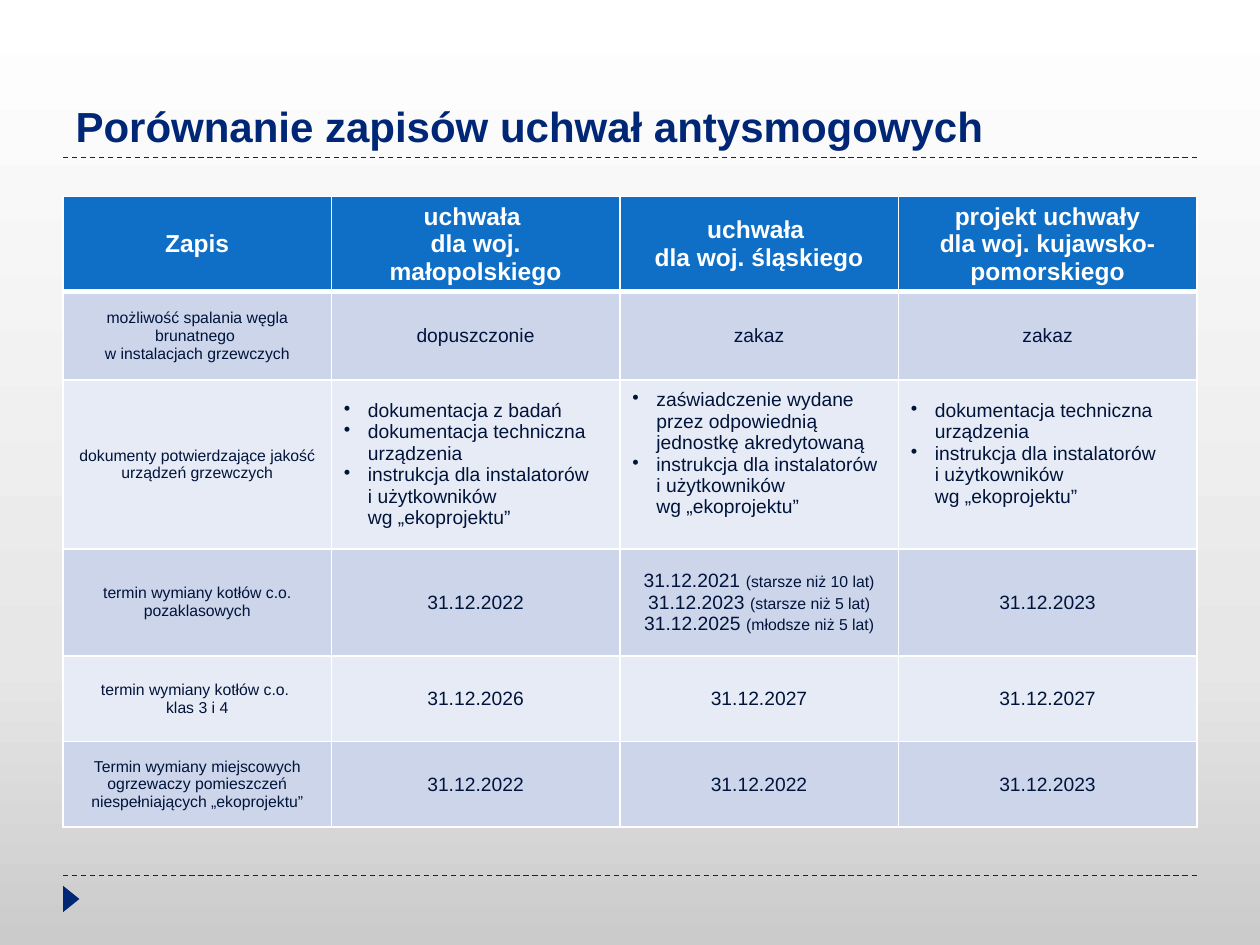
import copy
import pptx
import pptx.util
import pptx.dml.color
import pptx.enum.dml
import pptx.enum.shapes
import pptx.enum.text
import pptx.oxml
import pptx.oxml.ns

Inches, Pt = pptx.util.Inches, pptx.util.Pt
RGB = pptx.dml.color.RGBColor
Align = pptx.enum.text.PP_ALIGN
Anchor = pptx.enum.text.MSO_ANCHOR
qn = pptx.oxml.ns.qn

TITLE = "Porównanie zapisów uchwał antysmogowych"
GUIDE = "instrukcja dla instalatorów \vi użytkowników \vwg „ekoprojektu”"
TECH = "dokumentacja techniczna urządzenia"
ROWS = [
    ["Zapis", "uchwała \ndla woj. małopolskiego", "uchwała \ndla woj. śląskiego",
     "projekt uchwały\vdla woj. kujawsko-pomorskiego"],
    ["możliwość spalania węgla brunatnego \vw instalacjach grzewczych",
     "dopuszczonie", "zakaz", "zakaz"],
    ["dokumenty potwierdzające jakość urządzeń grzewczych",
     ["dokumentacja z badań", TECH, GUIDE],
     ["zaświadczenie wydane przez odpowiednią jednostkę akredytowaną", GUIDE],
     [TECH, GUIDE]],
    ["termin wymiany kotłów c.o. pozaklasowych", "31.12.2022",
     "31.12.2021 (starsze niż 10 lat)\n31.12.2023 (starsze niż 5 lat)\n"
     "31.12.2025 (młodsze niż 5 lat)", "31.12.2023"],
    ["termin wymiany kotłów c.o. \vklas 3 i 4", "31.12.2026", "31.12.2027", "31.12.2027"],
    ["Termin wymiany miejscowych ogrzewaczy pomieszczeń niespełniających „ekoprojektu”",
     "31.12.2022", "31.12.2022", "31.12.2023"],
]
WIDTHS = [2.13, 2.29, 2.21, 2.37]
HEIGHTS = [0.75, 0.7, 1.34, 0.85, 0.68, 0.68]
LEFT, WIDE = 0.5, 9
RULES = [6.95, 1.25]
HEAD, BODY, SMALL = 14, 11, 9

NAVY = RGB(0x00, 0x27, 0x76)
INK = RGB(0x00, 0x14, 0x3B)
WHITE = RGB(0xFF, 0xFF, 0xFF)
BLUE = RGB(0x0F, 0x6F, 0xC6)
BANDS = [RGB(0xE7, 0xEB, 0xF5), RGB(0xCC, 0xD5, 0xEA)]
STOPS = [(0, WHITE), (0.7, RGB(0xE7, 0xE7, 0xE7)), (1, RGB(0xCB, 0xCB, 0xCB))]


def shade(slide):
    fill = slide.background.fill
    fill.gradient()
    fill.gradient_angle = 270
    stops = slide.element.find(".//" + qn("a:gsLst"))
    stops.append(copy.deepcopy(stops[0]))
    for stop, (place, color) in zip(fill.gradient_stops, STOPS):
        stop.position = place
        stop.color.rgb = color


def rule(slide, top):
    line = slide.shapes.add_connector(
        pptx.enum.shapes.MSO_CONNECTOR.STRAIGHT,
        Inches(LEFT), Inches(top), Inches(LEFT + WIDE), Inches(top))
    line.line.color.rgb = NAVY
    line.line.width = Pt(0.75)
    line.line.dash_style = pptx.enum.dml.MSO_LINE.DASH
    props = line.element.spPr
    props.append(props.makeelement(qn("a:effectLst"), {}))


def edge(cell, row):
    props = cell._tc.get_or_add_tcPr()
    thick = {"T": 3 if row == 1 else 1, "B": 3 if row == 0 else 1}
    for side in "LRTB":
        line = pptx.oxml.parse_xml(
            f'<a:ln{side} {pptx.oxml.ns.nsdecls("a")} w="{Pt(thick.get(side, 1))}">'
            f'<a:solidFill><a:srgbClr val="{WHITE}"/></a:solidFill></a:ln{side}>')
        props.append(line)


def bullet(para):
    props = para._p.get_or_add_pPr()
    props.set("marL", str(Inches(0.19)))
    props.set("indent", str(-Inches(0.19)))
    mark = props.makeelement(qn("a:buChar"), {"char": "•"})
    props.append(mark)


def write(cell, row, col, text):
    listed = isinstance(text, list)
    frame = cell.text_frame
    frame.text = "\n".join(text) if listed else text
    cell.vertical_anchor = Anchor.MIDDLE
    if listed and col > 1:
        cell.margin_bottom = Inches(0.22)
    size = HEAD if row == 0 else SMALL if col == 0 else BODY
    for para in frame.paragraphs:
        if listed:
            bullet(para)
        else:
            para.alignment = Align.CENTER
        main, mark, note = para.text.partition("(")
        if mark:
            para.text = main
            para.add_run().text = mark + note
        for run in para.runs:
            font = run.font
            font.name = "Arial"
            font.size = Pt(SMALL if run.text.startswith("(") else size)
            font.bold = row == 0
            font.color.rgb = WHITE if row == 0 else INK


def grid(slide):
    table = slide.shapes.add_table(
        len(ROWS), len(WIDTHS), Inches(LEFT), Inches(1.56),
        Inches(WIDE), Inches(sum(HEIGHTS))).table
    for col, width in enumerate(WIDTHS):
        table.columns[col].width = Inches(width)
    for row, texts in enumerate(ROWS):
        table.rows[row].height = Inches(HEIGHTS[row])
        for col, text in enumerate(texts):
            cell = table.cell(row, col)
            edge(cell, row)
            cell.fill.solid()
            cell.fill.fore_color.rgb = BANDS[row % 2] if row else BLUE
            write(cell, row, col, text)


def main():
    deck = pptx.Presentation()
    deck.slide_width, deck.slide_height = Inches(10), Inches(7.5)
    slide = deck.slides.add_slide(deck.slide_layouts[5])
    shade(slide)

    for top in RULES:
        rule(slide, top)
    arrow = slide.shapes.add_shape(
        pptx.enum.shapes.MSO_SHAPE.ISOSCELES_TRIANGLE,
        Inches(0.46), Inches(7.07), Inches(0.21), Inches(0.13))
    arrow.rotation = 90
    arrow.shadow.inherit = False
    arrow.fill.solid()
    arrow.fill.fore_color.rgb = NAVY
    arrow.line.fill.background()

    title = slide.shapes.title
    title.left, title.top = Inches(LEFT), Inches(0.17)
    title.width, title.height = Inches(WIDE), Inches(1.08)
    frame = title.text_frame
    frame.text = TITLE
    frame.vertical_anchor = Anchor.BOTTOM
    para = frame.paragraphs[0]
    para.alignment = Align.LEFT
    font = para.runs[0].font
    font.name, font.size, font.bold = "Arial", Pt(24), True
    font.color.rgb = NAVY

    grid(slide)
    deck.save("out.pptx")


if __name__ == "__main__":
    main()
